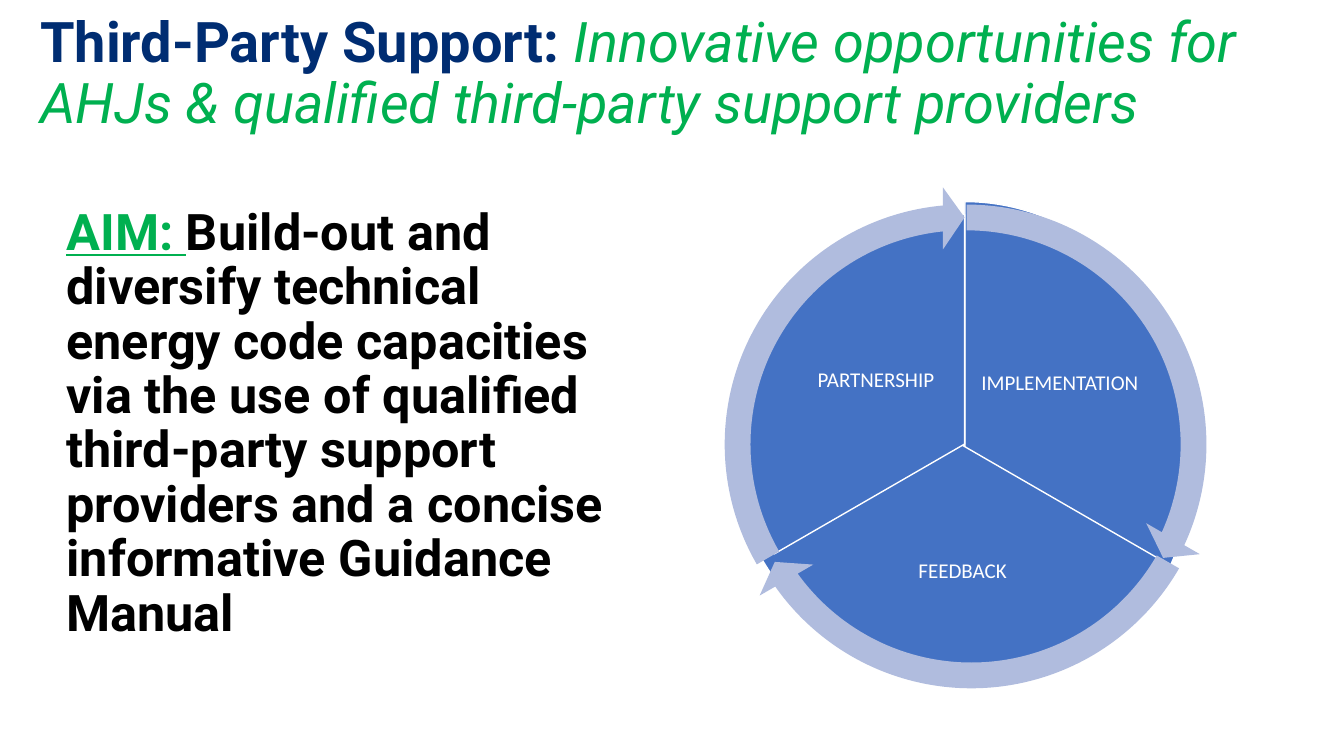
"""Build the third-party support slide with its three-part cycle diagram."""
import dataclasses

import lxml.etree
import pptx
import pptx.dml.color
import pptx.enum.shapes
import pptx.enum.text
import pptx.oxml.ns
import pptx.util

SHAPES = pptx.enum.shapes.MSO_SHAPE
ANCHOR = pptx.enum.text.MSO_ANCHOR
ALIGN = pptx.enum.text.PP_ALIGN


@dataclasses.dataclass(frozen=True)
class Theme:
    heading_font: str = "Roboto"
    label_font: str = "Calibri"
    title_size: int = 40
    body_size: int = 36
    label_size: int = 15
    navy: str = "002D72"
    green: str = "00B050"
    black: str = "000000"
    white: str = "FFFFFF"
    blue: str = "4472C4"
    pale_blue: str = "B0BCDE"
    line_spacing: float = 0.9


def color(value):
    return pptx.dml.color.RGBColor.from_string(value)


def place(shape, box):
    shape.left, shape.top, shape.width, shape.height = map(pptx.util.Cm, box)


def add_text(paragraph, text, *, font, size, fill, bold=False, italic=False, underline=False):
    run = paragraph.add_run()
    run.text = text
    run.font.name = font
    run.font.size = pptx.util.Pt(size)
    run.font.color.rgb = color(fill)
    run.font.bold = bold
    run.font.italic = italic
    run.font.underline = underline


class CycleSlide:
    def __init__(self, presentation, theme):
        self.theme = theme
        self.slide = presentation.slides.add_slide(presentation.slide_layouts[1])
        self.diagram = self.slide.shapes.add_group_shape()

    def paragraph(self, shape, anchor, align):
        frame = shape.text_frame
        frame.word_wrap = True
        frame.auto_size = pptx.enum.text.MSO_AUTO_SIZE.NONE
        frame.vertical_anchor = anchor
        paragraph = frame.paragraphs[0]
        paragraph.alignment = align
        paragraph.line_spacing = self.theme.line_spacing
        paragraph.space_before = pptx.util.Pt(0)
        return paragraph

    def placeholder(self, index, box, size, runs):
        shape = self.slide.placeholders[index]
        place(shape, box)
        paragraph = self.paragraph(shape, ANCHOR.TOP, ALIGN.LEFT)
        properties = paragraph._p.get_or_add_pPr()
        properties.set("marL", "0")
        properties.set("indent", "0")
        lxml.etree.SubElement(properties, pptx.oxml.ns.qn("a:buNone"))
        for text, style in runs:
            add_text(paragraph, text, font=self.theme.heading_font, size=size, **style)

    def figure(self, kind, box, adjustments, fill):
        shape = self.diagram.shapes.add_shape(kind, *map(pptx.util.Cm, box))
        shape.shadow.inherit = False
        shape.fill.solid()
        shape.fill.fore_color.rgb = color(fill)
        shape.line.fill.background()
        for index, value in enumerate(adjustments):
            shape.adjustments[index] = value
        return shape

    def sector(self, box, start, end):
        angles = [degrees * 0.6 for degrees in (start, end)]
        shape = self.figure(SHAPES.PIE, box, angles, self.theme.blue)
        shape.line.color.rgb = color(self.theme.white)
        shape.line.width = pptx.util.Pt(1)

    def label(self, text, box):
        shape = self.diagram.shapes.add_textbox(*map(pptx.util.Cm, box))
        frame = shape.text_frame
        frame.margin_left = frame.margin_right = pptx.util.Cm(0.05)
        frame.margin_top = frame.margin_bottom = pptx.util.Cm(0.05)
        paragraph = self.paragraph(shape, ANCHOR.MIDDLE, ALIGN.CENTER)
        add_text(paragraph, text, font=self.theme.label_font,
                 size=self.theme.label_size, fill=self.theme.white)

    def arrow(self, left, top, start, end):
        head = 5.46
        adjustments = [0.05, head * 0.6, (end - head) * 0.6, start * 0.6, 0.06]
        self.figure(SHAPES.CIRCULAR_ARROW, (left, top, 13, 13), adjustments, self.theme.pale_blue)


def main():
    presentation = pptx.Presentation()
    presentation.slide_width = pptx.util.Cm(33.87)
    presentation.slide_height = pptx.util.Cm(19.05)
    theme = Theme()
    page = CycleSlide(presentation, theme)

    page.placeholder(0, (0.76, 0.23, 32.28, 4.85), theme.title_size, [
        ("Third-Party Support: ", {"fill": theme.navy, "bold": True}),
        ("Innovative opportunities for AHJs & qualified third-party support providers",
         {"fill": theme.green, "italic": True}),
    ])
    page.placeholder(1, (1.42, 5.08, 14.86, 13), theme.body_size, [
        ("AIM: ", {"fill": theme.green, "bold": True, "underline": True}),
        ("Build-out and diversify technical energy code capacities via the use of qualified "
         "third-party support providers and a concise informative Guidance Manual",
         {"fill": theme.black, "bold": True}),
    ])

    stages = [
        ("IMPLEMENTATION", (18.54, 5.08, 11.56, 12.7), (24.64, 7.77, 4.14, 3.78), (17.86, 4.7)),
        ("FEEDBACK", (18.42, 5.41, 11.56, 11.56), (21.16, 12.9, 6.2, 3.02), (17.98, 4.8)),
        ("PARTNERSHIP", (18.85, 5.41, 10.92, 11.56), (20.12, 7.87, 3.91, 3.43), (17.81, 4.7)),
    ]
    angles = [(270, 30), (30, 150), (150, 270)]
    for (name, sector_box, label_box, _), (start, end) in zip(stages, angles):
        page.sector(sector_box, start, end)
        page.label(name, label_box)
    for (_, _, _, corner), (start, end) in zip(stages, angles):
        page.arrow(*corner, start, end)

    presentation.save("out.pptx")


if __name__ == "__main__":
    main()
